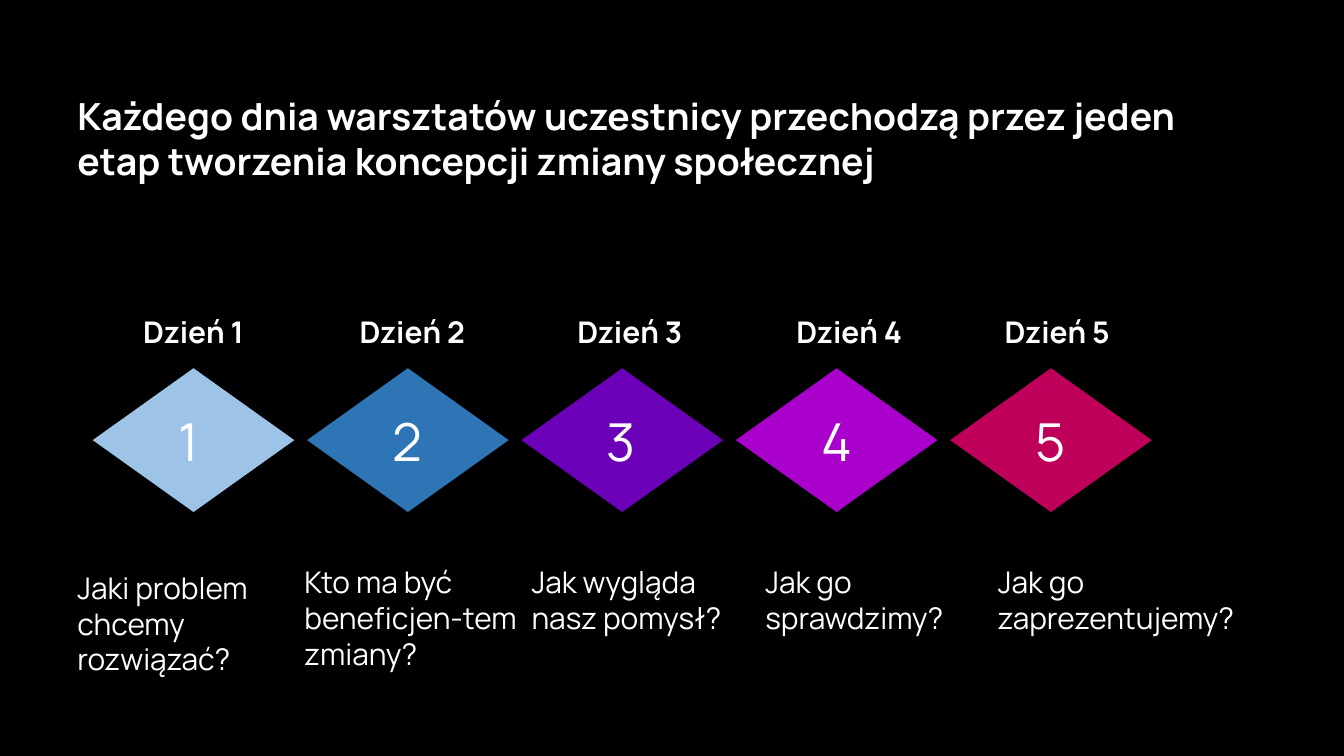
from pptx import Presentation
from pptx import util as u
from pptx.dml.color import RGBColor
from pptx.enum import shapes, text

FONT = "Manrope"
COLORS = {
    "background": "000000",
    "text": "FFFFFF",
    "days": ["9DC3E6", "2E75B6", "6B00B8", "A900CB", "BF005B"],
}

# Grid in inches: five diamonds, equally spaced from the first to the last
FIRST_LEFT, LAST_LEFT = 0.69, 7.07
DIAMOND_WIDTH, DIAMOND_HEIGHT = 1.5, 1.07
ROWS = {"title": 0.65, "day": 2.29, "diamond": 2.74, "number": 3.0, "question": 4.16}

# Left of the day label; left, width and drop of the question; the question
DAYS = [
    (0.99, 0.5, 1.69, 0.04, "Jaki problem chcemy rozwiązać?"),
    (2.6, 2.19, 1.83, 0, "Kto ma być\vbeneficjen-tem zmiany?"),
    (4.22, 3.88, 1.95, 0, "Jak wygląda\vnasz pomysł?"),
    (5.85, 5.62, 1.87, 0, "Jak go sprawdzimy?"),
    (7.4, 7.35, 2.04, 0, "Jak go zaprezentujemy?"),
]


def color(name):
    return RGBColor.from_string(name)


def box(left, top, width, height):
    return [u.Inches(length) for length in (left, top, width, height)]


def write(shape, words, size, bold=False, anchor=text.MSO_ANCHOR.MIDDLE):
    frame = shape.text_frame
    frame.text = words
    frame.word_wrap = True
    frame.auto_size = text.MSO_AUTO_SIZE.NONE
    frame.vertical_anchor = anchor
    frame.margin_left = frame.margin_right = u.Pt(5.4)
    frame.margin_top = frame.margin_bottom = u.Pt(2.7)
    for paragraph in frame.paragraphs:
        paragraph.alignment = text.PP_ALIGN.LEFT
        paragraph.font.name = FONT
        paragraph.font.size = u.Pt(size)
        paragraph.font.bold = bold
        paragraph.font.color.rgb = color(COLORS["text"])


def add_title(slide, words):
    title = slide.shapes.title
    title.left, title.top, title.width, title.height = box(0.5, ROWS["title"], 8.63, 0.75)
    write(title, words, 20, bold=True)


def add_diamond(slide, left, fill):
    diamond = slide.shapes.add_shape(
        shapes.MSO_SHAPE.DIAMOND,
        *box(left, ROWS["diamond"], DIAMOND_WIDTH, DIAMOND_HEIGHT))
    diamond.shadow.inherit = False
    diamond.fill.solid()
    diamond.fill.fore_color.rgb = color(fill)
    diamond.line.fill.background()


def add_label(slide, place, words, size, **style):
    write(slide.shapes.add_textbox(*box(*place)), words, size, **style)


def add_day(slide, number, fill, day_left, question_left, question_width, drop, question):
    pitch = (LAST_LEFT - FIRST_LEFT) / (len(DAYS) - 1)
    left = FIRST_LEFT + (number - 1) * pitch
    add_diamond(slide, left, fill)
    add_label(slide, (left + 0.56, ROWS["number"], 1.06, 0.55), str(number), 28)
    add_label(slide, (day_left, ROWS["day"], 1.51, 0.35), f"Dzień {number}", 16, bold=True)
    add_label(slide, (question_left, ROWS["question"] + drop, question_width, 0.88),
              question, 16, anchor=text.MSO_ANCHOR.TOP)


def main():
    deck = Presentation()
    deck.slide_width = u.Inches(10)
    deck.slide_height = deck.slide_width * 9 // 16
    slide = deck.slides.add_slide(deck.slide_layouts.get_by_name("Title Only"))
    slide.background.fill.solid()
    slide.background.fill.fore_color.rgb = color(COLORS["background"])

    add_title(slide, "Każdego dnia warsztatów uczestnicy przechodzą przez jeden "
                     "etap tworzenia koncepcji zmiany społecznej")
    for number, (fill, day) in enumerate(zip(COLORS["days"], DAYS), start=1):
        add_day(slide, number, fill, *day)
    deck.save("out.pptx")


if __name__ == "__main__":
    main()
